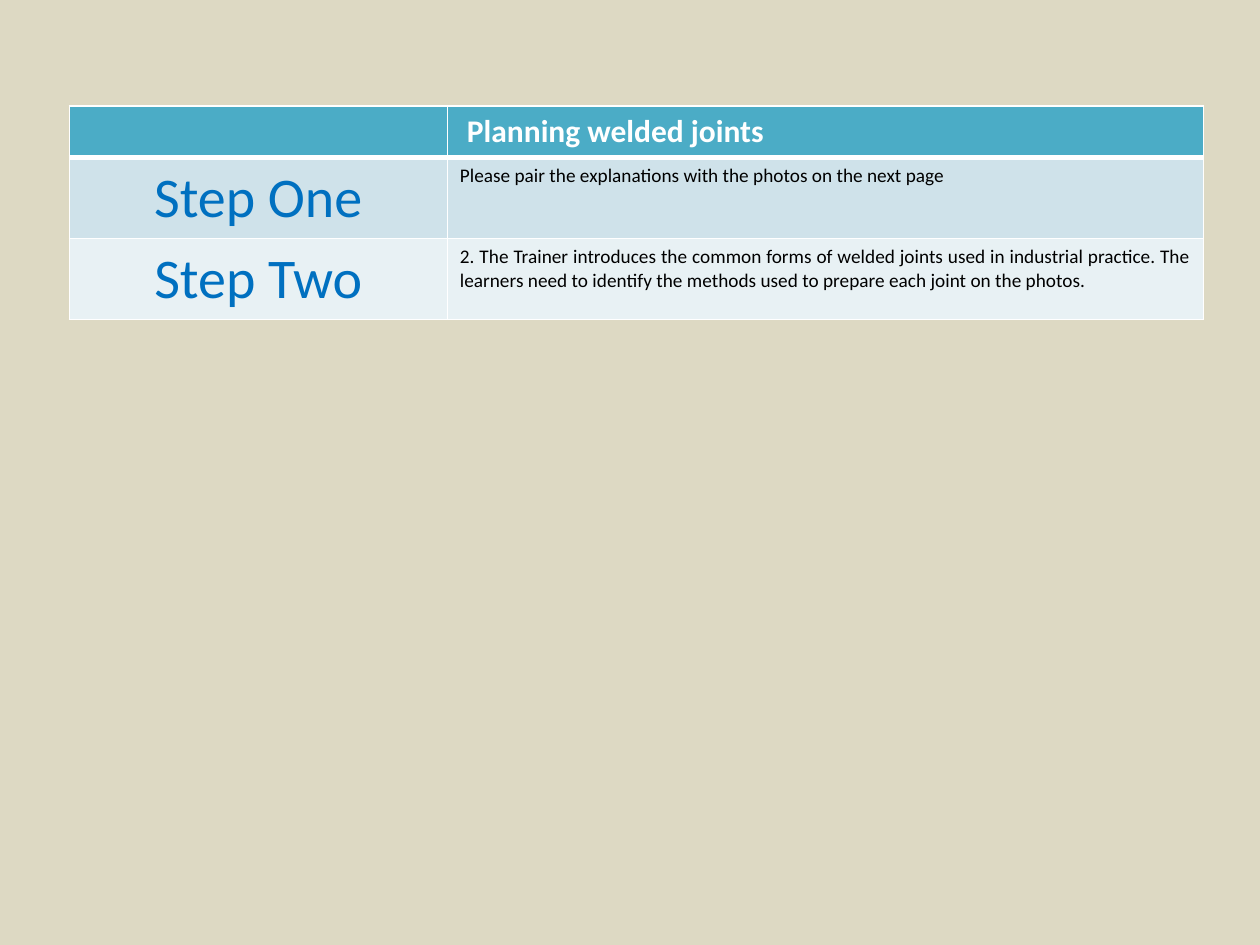
from lxml.etree import SubElement
from pptx import Presentation
from pptx.dml.color import RGBColor
from pptx.enum.text import PP_ALIGN as Align
from pptx.oxml.ns import qn
from pptx.util import Inches, Pt

SAND = RGBColor(0xDD, 0xD9, 0xC3)
TEAL = RGBColor(0x4B, 0xAC, 0xC6)
BLUE = RGBColor(0x00, 0x70, 0xC0)
WHITE = RGBColor(0xFF, 0xFF, 0xFF)
BLACK = RGBColor(0x00, 0x00, 0x00)
BANDS = (RGBColor(0xCF, 0xE2, 0xEA), RGBColor(0xE8, 0xF1, 0xF4))

FONT = "Calibri"
THIN, THICK = Pt(0.96), Pt(3)
HEAD_H, STEP_H = Inches(0.41), Inches(0.63)

TITLE = " Planning welded joints"
STEPS = (
    ("Step One", "Please pair the explanations with the photos on the next page"),
    ("Step Two", "2. The Trainer introduces the common forms of welded joints used in "
                 "industrial practice. The learners need to identify the methods used "
                 "to prepare each joint on the photos."),
)


def add_edges(cell, top=THIN, bottom=THIN):
    """Draw white borders; the schema wants them before the fill."""
    props = cell._tc.get_or_add_tcPr()
    for side, width in zip("LRTB", (THIN, THIN, top, bottom)):
        line = SubElement(props, qn(f"a:ln{side}"), w=str(width))
        fill = SubElement(line, qn("a:solidFill"))
        SubElement(fill, qn("a:srgbClr"), val=str(WHITE))


def paint(cell, color):
    cell.fill.solid()
    cell.fill.fore_color.rgb = color


def write(cell, text, size, color, align=Align.LEFT, bold=False):
    cell.text_frame.text = text
    para = cell.text_frame.paragraphs[0]
    para.alignment = align
    font = para.runs[0].font
    font.name, font.size, font.bold = FONT, Pt(size), bold
    font.color.rgb = color


def add_plan(slide, left, top, width):
    """Place the table of steps, its columns in the ratio 1 to 2."""
    height = HEAD_H + STEP_H * len(STEPS)
    table = slide.shapes.add_table(
        len(STEPS) + 1, 2, left, top, width, height).table
    table.columns[0].width = width // 3
    table.columns[1].width = width - width // 3

    table.rows[0].height = HEAD_H
    for col in range(2):
        cell = table.cell(0, col)
        add_edges(cell, bottom=THICK)
        paint(cell, TEAL)
    write(table.cell(0, 1), TITLE, 18, WHITE, bold=True)

    for row, (step, task) in enumerate(STEPS, 1):
        table.rows[row].height = STEP_H
        for col in range(2):
            cell = table.cell(row, col)
            add_edges(cell, top=THICK if row == 1 else THIN)
            paint(cell, BANDS[(row - 1) % 2])
        write(table.cell(row, 0), step, 32, BLUE, Align.CENTER)
        write(table.cell(row, 1), task, 11, BLACK, Align.JUSTIFY)


def main():
    deck = Presentation()
    deck.slide_width, deck.slide_height = Inches(10), Inches(7.5)
    slide = deck.slides.add_slide(deck.slide_layouts[6])
    back = slide.background.fill
    back.solid()
    back.fore_color.rgb = SAND
    add_plan(slide, Inches(0.55), Inches(0.84), Inches(9))
    deck.save("out.pptx")


if __name__ == "__main__":
    main()
